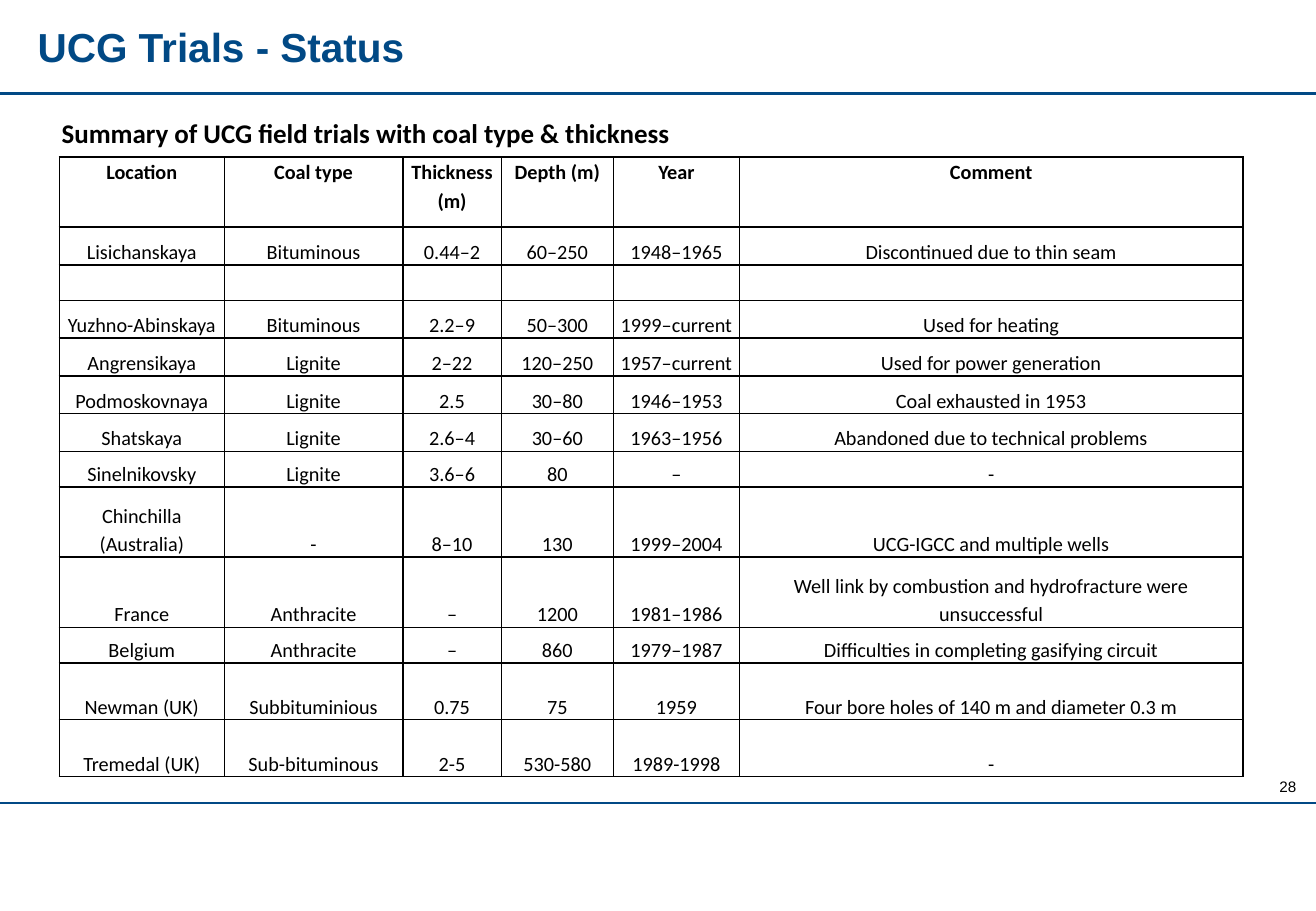
"""Build the slide on the status of underground coal gasification trials."""
from dataclasses import dataclass

from lxml import etree
from pptx import Presentation
from pptx.dml.color import RGBColor
from pptx.enum.shapes import MSO_CONNECTOR
from pptx.enum.text import MSO_ANCHOR, PP_ALIGN
from pptx.oxml.ns import qn
from pptx.util import Cm, Pt

STRAIGHT = MSO_CONNECTOR.STRAIGHT
TOP, MIDDLE, BOTTOM = MSO_ANCHOR.TOP, MSO_ANCHOR.MIDDLE, MSO_ANCHOR.BOTTOM
LEFT, CENTER, RIGHT = PP_ALIGN.LEFT, PP_ALIGN.CENTER, PP_ALIGN.RIGHT
TITLE_ONLY_LAYOUT = 5


@dataclass(frozen=True)
class Theme:
    """Colours, fonts and type sizes of the slide."""
    accent: RGBColor = RGBColor(0x01, 0x49, 0x85)
    text: RGBColor = RGBColor(0, 0, 0)
    heading_font: str = "Arial"
    table_font: str = "Calibri"
    title_size: Pt = Pt(24)
    caption_size: Pt = Pt(16)
    table_size: Pt = Pt(12)
    number_size: Pt = Pt(9)
    rule_width: Pt = Pt(1.5)
    border_width: Pt = Pt(1)


THEME = Theme()
SLIDE_WIDTH, SLIDE_HEIGHT = Cm(27.51), Cm(19.05)
CAPTION = "Summary of UCG field trials with coal type & thickness"
COLUMN_WIDTHS = (3.45, 3.73, 2.06, 2.34, 2.64, 10.52)
CAPTION_HEIGHT, TALL, NORMAL, LOW, MEDIUM = 1.63, 1.47, 0.79, 0.74, 1.19
HEADER = ("Location", "Coal type", "Thickness (m)", "Depth (m)", "Year", "Comment")
TRIALS = (
    (NORMAL, ("Lisichanskaya", "Bituminous", "0.44–2", "60–250", "1948–1965",
              "Discontinued due to thin seam")),
    (LOW, ("",) * len(HEADER)),
    (NORMAL, ("Yuzhno-Abinskaya", "Bituminous", "2.2–9", "50–300", "1999–current",
              "Used for heating")),
    (NORMAL, ("Angrensikaya", "Lignite", "2–22", "120–250", "1957–current",
              "Used for power generation")),
    (NORMAL, ("Podmoskovnaya", "Lignite", "2.5", "30–80", "1946–1953",
              "Coal exhausted in 1953")),
    (NORMAL, ("Shatskaya", "Lignite", "2.6–4", "30–60", "1963–1956",
              "Abandoned due to technical problems")),
    (LOW, ("Sinelnikovsky", "Lignite", "3.6–6", "80", "–", "-")),
    (TALL, ("Chinchilla (Australia)", "-", "8–10", "130", "1999–2004",
            "UCG-IGCC and multiple wells")),
    (TALL, ("France", "Anthracite", "–", "1200", "1981–1986",
            "Well link by combustion and hydrofracture were unsuccessful")),
    (LOW, ("Belgium", "Anthracite", "–", "860", "1979–1987",
           "Difficulties in completing gasifying circuit")),
    (MEDIUM, ("Newman (UK)", "Subbituminious", "0.75", "75", "1959",
              "Four bore holes of 140 m and diameter 0.3 m")),
    (MEDIUM, ("Tremedal (UK)", "Sub-bituminous", "2-5", "530-580", "1989-1998", "-")),
)


def format_paragraph(paragraph, font_name, size, color, alignment, bold=False):
    """Set the alignment and font of a paragraph."""
    paragraph.alignment = alignment
    font = paragraph.font
    font.name, font.size, font.bold = font_name, size, bold
    font.color.rgb = color


def add_rule(slide, top):
    """Draw a rule across the whole slide."""
    rule = slide.shapes.add_connector(STRAIGHT, 0, top, SLIDE_WIDTH, top)
    rule.line.color.rgb = THEME.accent
    rule.line.width = THEME.rule_width
    etree.SubElement(rule._element.spPr, qn("a:effectLst"))


def set_title(slide, text):
    """Place and format the title placeholder."""
    title = slide.shapes.title
    title.left, title.top, title.width, title.height = Cm(0.53), Cm(0.36), Cm(26.16), Cm(1.3)
    title.text_frame.text = text
    title.text_frame.vertical_anchor = MIDDLE
    paragraph = title.text_frame.paragraphs[0]
    paragraph.line_spacing = 0.98
    format_paragraph(paragraph, THEME.heading_font, THEME.title_size, THEME.accent, LEFT, True)


def add_page_number(slide, text):
    """Add the page number at the lower right."""
    box = slide.shapes.add_textbox(Cm(26.44), Cm(16.13), Cm(0.91), Cm(0.64))
    frame = box.text_frame
    frame.text = text
    frame.word_wrap = False
    frame.vertical_anchor = MIDDLE
    format_paragraph(frame.paragraphs[0], THEME.heading_font, THEME.number_size,
                     THEME.text, RIGHT)


def set_borders(cell, visible):
    """Draw the visible sides of a cell and hide the others."""
    properties = cell._tc.get_or_add_tcPr()
    for position, side in enumerate(("lnL", "lnR", "lnT", "lnB")):
        line = etree.Element(qn(f"a:{side}"), w=str(THEME.border_width))
        if side in visible:
            fill = etree.SubElement(line, qn("a:solidFill"))
            etree.SubElement(fill, qn("a:srgbClr"), val=str(THEME.text))
        else:
            etree.SubElement(line, qn("a:noFill"))
        properties.insert(position, line)


def fill_cell(cell, text, anchor, size=THEME.table_size, alignment=CENTER, bold=False,
              borders=("lnL", "lnR", "lnT", "lnB"), margin_bottom=0):
    """Write one table cell and set its look."""
    cell.text = text
    cell.fill.background()
    cell.vertical_anchor = anchor
    cell.margin_left = cell.margin_right = Cm(0.05)
    cell.margin_top, cell.margin_bottom = 0, margin_bottom
    paragraph = cell.text_frame.paragraphs[0]
    paragraph.line_spacing = 1.15
    format_paragraph(paragraph, THEME.table_font, size, THEME.text, alignment, bold)
    set_borders(cell, borders)


def add_trials_table(slide):
    """Add the table of field trials with its caption row."""
    heights = (CAPTION_HEIGHT, TALL, *(height for height, _ in TRIALS))
    table = slide.shapes.add_table(len(heights), len(HEADER), Cm(1.24), Cm(1.65),
                                   Cm(sum(COLUMN_WIDTHS)), Cm(sum(heights))).table
    table.first_row = table.horz_banding = False
    for column, width in zip(table.columns, COLUMN_WIDTHS):
        column.width = Cm(width)
    for row, height in zip(table.rows, heights):
        row.height = Cm(height)

    for index, cell in enumerate(table.rows[0].cells):
        fill_cell(cell, "" if index else CAPTION, BOTTOM, THEME.caption_size, LEFT, True,
                  borders=("lnB",), margin_bottom=Cm(0.12))
    table.cell(0, 0).merge(table.cell(0, len(HEADER) - 1))
    for cell, text in zip(table.rows[1].cells, HEADER):
        fill_cell(cell, text, TOP, bold=True)
    for row_index, (_, values) in enumerate(TRIALS, start=2):
        for cell, text in zip(table.rows[row_index].cells, values):
            fill_cell(cell, text, BOTTOM)


def main():
    """Build and save the presentation."""
    presentation = Presentation()
    presentation.slide_width, presentation.slide_height = SLIDE_WIDTH, SLIDE_HEIGHT
    slide = presentation.slides.add_slide(presentation.slide_layouts[TITLE_ONLY_LAYOUT])
    for top in (Cm(1.96), Cm(16.79)):
        add_rule(slide, top)
    set_title(slide, "UCG Trials - Status")
    add_trials_table(slide)
    add_page_number(slide, "28")
    presentation.save("out.pptx")


if __name__ == "__main__":
    main()
